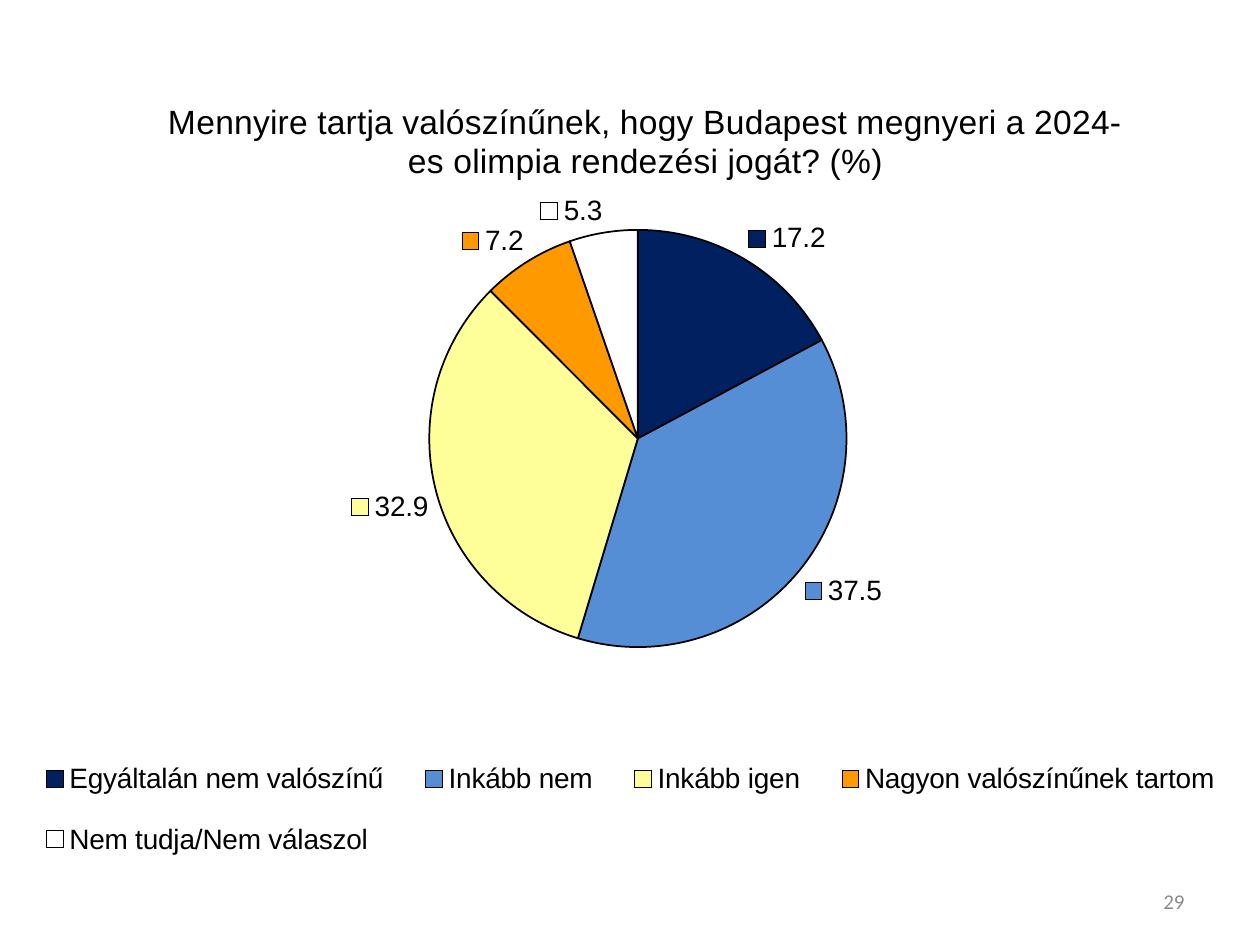
"""Build the slide showing a pie chart of expectations about the 2024 Olympic bid."""
from dataclasses import dataclass

import pptx
import pptx.chart.data
import pptx.dml.color
import pptx.enum.chart
import pptx.enum.text
import pptx.oxml
import pptx.oxml.ns
import pptx.util

Inches = pptx.util.Inches
qn = pptx.oxml.ns.qn


@dataclass(frozen=True)
class Theme:
    chart_font: str = "Arial"
    number_font: str = "Calibri"
    ink: str = "000000"
    muted: str = "8C8C8C"
    title_size: float = 19.2
    chart_size: float = 16
    number_size: float = 12
    outline_width: float = 1


@dataclass(frozen=True)
class Answer:
    label: str
    percent: float
    color: str


@dataclass(frozen=True)
class Area:
    x: float
    y: float
    width: float | None = None
    height: float | None = None
    target: str | None = None


THEME = Theme()
QUESTION = "Mennyire tartja valószínűnek, hogy Budapest megnyeri a 2024-es olimpia rendezési jogát? (%)"
ANSWERS = [
    Answer("Egyáltalán nem valószínű", 17.2, "002060"),
    Answer("Inkább nem", 37.5, "558ED5"),
    Answer("Inkább igen", 32.9, "FFFF99"),
    Answer("Nagyon valószínűnek tartom", 7.2, "FF9900"),
    Answer("Nem tudja/Nem válaszol", 5.3, "FFFFFF"),
]
AREAS = {
    "c:title": Area(0.12, 0.05),
    "c:plotArea": Area(0.075, 0.213, 0.862, 0.495, "inner"),
    "c:legend": Area(0, 0.81, 1, 0.18),
}


def rgb(color: str) -> pptx.dml.color.RGBColor:
    """Convert a hexadecimal colour."""
    return pptx.dml.color.RGBColor.from_string(color)


def format_font(font, *, name: str, size: float, color: str) -> None:
    """Apply typeface, size and colour in regular weight."""
    font.name, font.size, font.bold = name, pptx.util.Pt(size), False
    font.color.rgb = rgb(color)


def write_text(text_frame, text: str, *, name: str, size: float, color: str, align) -> None:
    """Write one formatted paragraph."""
    paragraph = text_frame.paragraphs[0]
    paragraph.alignment = align
    run = paragraph.add_run()
    run.text = text
    format_font(run.font, name=name, size=size, color=color)


def place_part(chart, tag: str, area: Area) -> None:
    """Give a chart part a manual layout in fractions of the chart."""
    part = chart.element.find(f".//{qn(tag)}")
    for old_layout in part.findall(qn("c:layout")):
        part.remove(old_layout)
    layout = pptx.oxml.parse_xml(f"<c:layout {pptx.oxml.ns.nsdecls('c')}><c:manualLayout/></c:layout>")
    settings = [("layoutTarget", area.target), ("xMode", "edge"), ("yMode", "edge"),
                ("x", area.x), ("y", area.y), ("w", area.width), ("h", area.height)]
    for setting, value in settings:
        if value is not None:
            child = layout[0].makeelement(qn(f"c:{setting}"), {"val": str(value)})
            layout[0].append(child)
    overlay = part.find(qn("c:overlay"))
    if overlay is None:
        part.insert(0, layout)
    else:
        overlay.addprevious(layout)


def add_answer_chart(slide, answers: list[Answer]) -> None:
    """Add the pie chart with its title, labels and legend."""
    data = pptx.chart.data.CategoryChartData(number_format="###0.0")
    data.categories = [answer.label for answer in answers]
    data.add_series("Series 1", [answer.percent for answer in answers])
    chart = slide.shapes.add_chart(pptx.enum.chart.XL_CHART_TYPE.PIE, Inches(0.11), Inches(0.4),
                                   Inches(9.79), Inches(6.69), data).chart
    body_format = dict(name=THEME.chart_font, size=THEME.chart_size, color=THEME.ink)
    format_font(chart.font, **body_format)

    chart.has_title = True
    write_text(chart.chart_title.text_frame, QUESTION, name=THEME.chart_font, size=THEME.title_size,
               color=THEME.ink, align=pptx.enum.text.PP_ALIGN.CENTER)
    chart.has_legend = True
    chart.legend.position = pptx.enum.chart.XL_LEGEND_POSITION.BOTTOM
    chart.legend.include_in_layout = False
    format_font(chart.legend.font, **body_format)

    plot = chart.plots[0]
    plot.vary_by_categories = True
    for index, answer in enumerate(answers):
        point_format = plot.series[0].points[index].format
        point_format.fill.solid()
        point_format.fill.fore_color.rgb = rgb(answer.color)
        point_format.line.color.rgb = rgb(THEME.ink)
        point_format.line.width = pptx.util.Pt(THEME.outline_width)

    plot.has_data_labels = True
    labels = plot.data_labels
    labels.show_value = labels.show_legend_key = True
    labels.show_percentage = False
    labels.number_format, labels.number_format_is_linked = "###0.0", False
    labels.position = pptx.enum.chart.XL_LABEL_POSITION.OUTSIDE_END
    format_font(labels.font, **body_format)

    for tag, area in AREAS.items():
        place_part(chart, tag, area)


def add_slide_number(slide, number: str) -> None:
    """Add the page number at the lower right."""
    shape = slide.shapes.add_textbox(Inches(7.17), Inches(6.95), Inches(2.33), Inches(0.4))
    shape.text_frame.word_wrap = True
    shape.text_frame.vertical_anchor = pptx.enum.text.MSO_ANCHOR.MIDDLE
    write_text(shape.text_frame, number, name=THEME.number_font, size=THEME.number_size,
               color=THEME.muted, align=pptx.enum.text.PP_ALIGN.RIGHT)


def main() -> None:
    """Create and save the presentation."""
    presentation = pptx.Presentation()
    presentation.slide_width, presentation.slide_height = Inches(10), Inches(7.5)
    slide = presentation.slides.add_slide(presentation.slide_layouts[6])
    add_slide_number(slide, "29")
    add_answer_chart(slide, ANSWERS)
    presentation.save("out.pptx")


if __name__ == "__main__":
    main()
